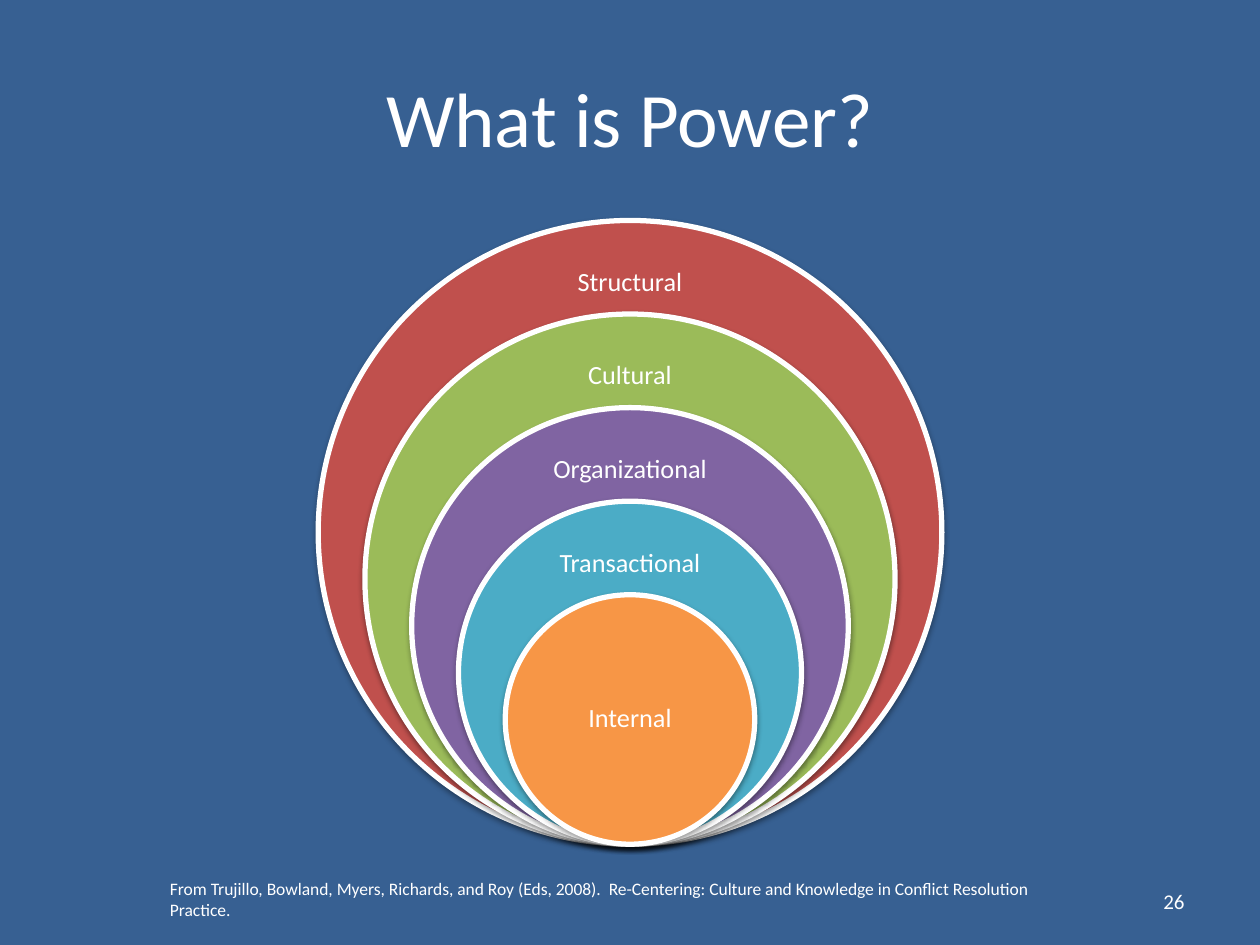
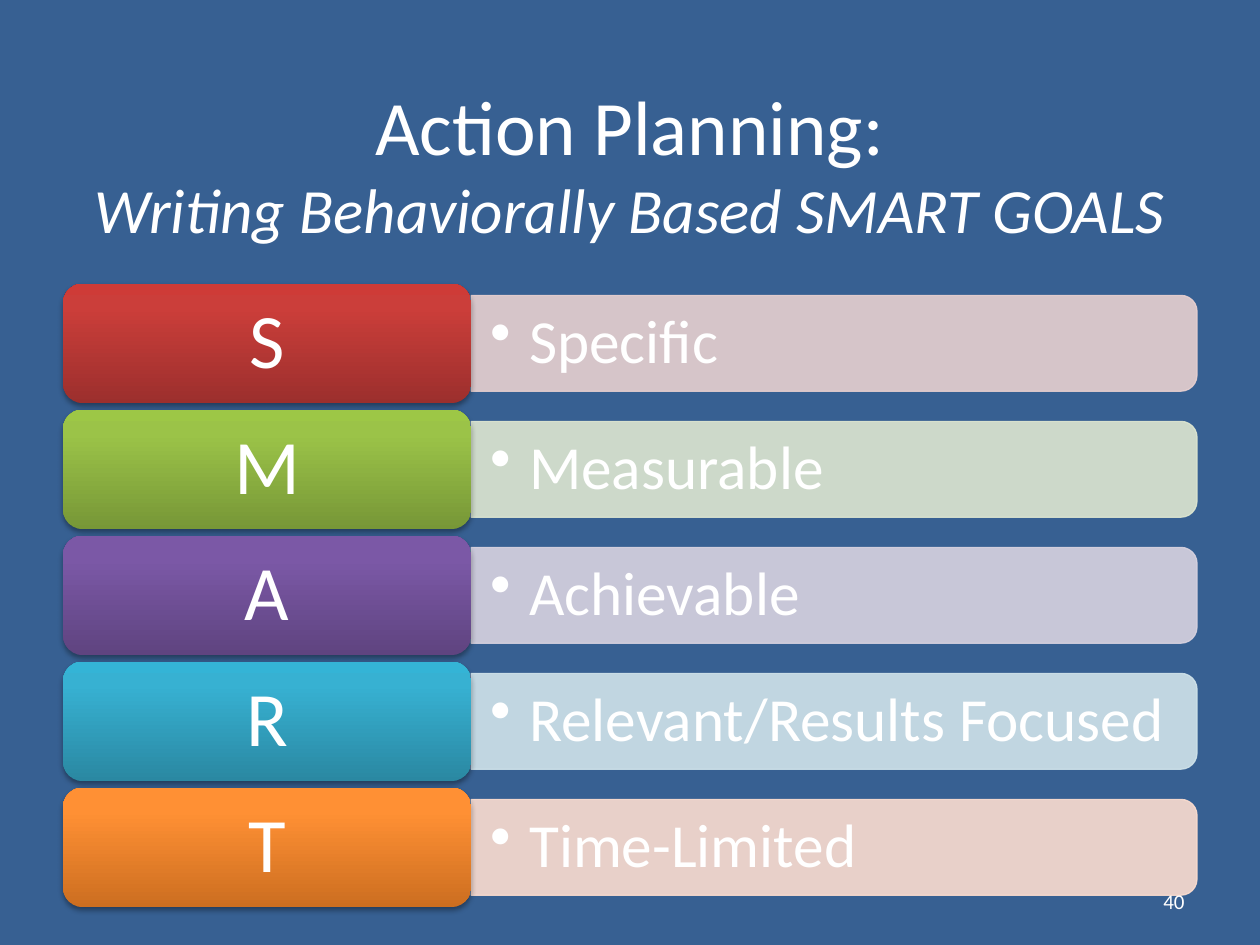
import pptx
import pptx.util
import pptx.dml.color
import pptx.enum.shapes
import pptx.enum.text
import pptx.oxml
import pptx.oxml.ns
from lxml import etree

Inches, Pt = pptx.util.Inches, pptx.util.Pt
SHAPE = pptx.enum.shapes.MSO_SHAPE
ALIGN = pptx.enum.text.PP_ALIGN
ANCHOR = pptx.enum.text.MSO_ANCHOR
qn = pptx.oxml.ns.qn

# Shared style
FONT, BACK, WHITE = "Calibri", "376092", "FFFFFF"

# Slide 1: rings from the outside in, with label width
POWER = "What is Power?"
RINGS = [
    ("Structural", "C0504D", 1.86),
    ("Cultural", "9BBB59", 1.81),
    ("Organizational", "8064A2", 1.79),
    ("Transactional", "4BACC6", 1.47),
    ("Internal", "F79646", 1.4),
]
SOURCE = ("From Trujillo, Bowland, Myers, Richards, and Roy (Eds, 2008).  "
          "Re-Centering: Culture and Knowledge in Conflict Resolution Practice.")

# Slide 2: goal, bar colour, tile gradient from bottom to top
PLAN = "Action Planning:"
SUB = "Writing Behaviorally Based SMART GOALS"
GOALS = [
    ("S", "Specific", "E8D0D0", ("9C2F2D", "CB3E3A", "CE3B37")),
    ("M", "Measurable", "DEE7D1", ("779737", "9BC348", "9DC746")),
    ("A", "Achievable", "D8D3E0", ("5F4480", "7B58A6", "7C57A8")),
    ("R", "Relevant/Results Focused", "D0E3EA", ("2A88A2", "37B1D2", "34B4D6")),
    ("T", "Time-Limited", "FCDDCF", ("CC6E20", "FF9034", "FF9136")),
]
STOPS = (0, 80, 100)


def color(code):
    return pptx.dml.color.RGBColor.from_string(code)


def add(parent, tag, **attrs):
    node = etree.SubElement(parent, qn(tag))
    for key, val in attrs.items():
        node.set(key, str(val))
    return node


def text(slide, box, words, size=15, align=ALIGN.CENTER, anchor=ANCHOR.MIDDLE,
         pad=(0.1, 0.05), space=None, bullet=False, sub=None):
    frame = slide.shapes.add_textbox(*map(Inches, box)).text_frame
    frame.word_wrap = True
    frame.vertical_anchor = anchor
    frame.margin_left = frame.margin_right = Inches(pad[0])
    frame.margin_top = frame.margin_bottom = Inches(pad[1])
    para = frame.paragraphs[0]
    para.alignment = align
    if space:
        para.line_spacing = space
    if bullet:
        props = para._p.get_or_add_pPr()
        props.set("marL", str(Inches(0.31)))
        props.set("indent", str(Inches(-0.31)))
        add(props, "a:buChar", char="•")
    for part, points, slant in [(words, size, False), (sub, 36, True)]:
        if part is None:
            continue
        if slant:
            para.add_line_break()
        run = para.add_run()
        run.text = part
        run.font.name, run.font.size = FONT, Pt(points)
        run.font.italic = slant
        run.font.color.rgb = color(WHITE)


def shape(slide, kind, box, fill=None, line=None, width=0.75):
    item = slide.shapes.add_shape(kind, *map(Inches, box))
    item.shadow.inherit = False
    if fill:
        item.fill.solid()
        item.fill.fore_color.rgb = color(fill)
    if line:
        item.line.color.rgb = color(line)
        item.line.width = Pt(width)
    else:
        item.line.fill.background()
    return item


def shade(item, alpha, dist):
    """Drop a soft shadow straight down."""
    effects = item._element.spPr.find(qn("a:effectLst"))
    drop = add(effects, "a:outerShdw", blurRad=Pt(3.1), dist=Pt(dist),
               dir=90 * 60000, rotWithShape=0)
    black = add(drop, "a:srgbClr", val="000000")
    add(black, "a:alpha", val=alpha * 1000)


def blend(item, codes):
    """Fill with a gradient that rises from the bottom."""
    item.fill.gradient()
    item.fill.gradient_angle = 90
    stops = next(item._element.spPr.iter(qn("a:gsLst")))
    for old in list(stops):
        stops.remove(old)
    for pos, code in zip(STOPS, codes):
        add(add(stops, "a:gs", pos=pos * 1000), "a:srgbClr", val=code)


def fade(item, alpha):
    for node in item._element.spPr.iter(qn("a:srgbClr")):
        add(node, "a:alpha", val=alpha * 1000)


def page(deck, number):
    slide = deck.slides.add_slide(deck.slide_layouts[6])
    slide.background.fill.solid()
    slide.background.fill.fore_color.rgb = color(BACK)
    return slide


def footer(slide, number):
    text(slide, (7.17, 6.95, 2.33, 0.4), number, size=12, align=ALIGN.RIGHT)


def power(deck):
    slide = page(deck, "26")
    text(slide, (0.5, 0.3, 9, 1.25), POWER, size=44)
    # Rings share a centre line and a bottom
    mid, base, full = 5, 6.7, 4.95
    step = full * 0.15
    for i, (name, fill, wide) in enumerate(RINGS):
        size = full - i * step
        top = base - size
        ring = shape(slide, SHAPE.OVAL, (mid - size / 2, top, size, size),
                     fill=fill, line=WHITE, width=3)
        shade(ring, 38, 1.6)
        last = i == len(RINGS) - 1
        drop, high = (size / 4, size / 2) if last else (0.25, 0.49)
        text(slide, (mid - wide / 2, top + drop, wide, high), name,
             pad=(0.12, 0.12), space=0.9)
    footer(slide, "26")
    text(slide, (1.25, 6.92, 7.08, 0.44), SOURCE, size=10,
         align=ALIGN.LEFT, anchor=ANCHOR.TOP)


def plan(deck):
    slide = page(deck, "40")
    text(slide, (0.5, 0.5, 9, 1.58), PLAN, size=44, sub=SUB)
    left, wide, high = 0.5, 3.24, 0.95
    long, thick = 5.76, 0.76
    start = left + wide
    for i, (letter, goal, tint, codes) in enumerate(GOALS):
        top = 2.25 + i
        mid = top + high / 2
        # Bar, turned so its round corners face right
        bar = shape(slide, SHAPE.ROUND_2_SAME_RECTANGLE,
                    (start + (long - thick) / 2, mid - long / 2, thick, long),
                    fill=tint, line=tint)
        bar.rotation = 90
        fade(bar, 90)
        text(slide, (start, mid - 0.345, 5.72, 0.69), goal, size=35,
             align=ALIGN.LEFT, pad=(0.15, 0.07), space=0.9, bullet=True)
        # Letter tile
        tile = shape(slide, SHAPE.ROUNDED_RECTANGLE, (left, top, wide, high))
        blend(tile, codes)
        shade(tile, 35, 1.8)
        text(slide, (left + 0.05, top + 0.05, wide - 0.1, high - 0.1), letter,
             size=44, pad=(0.18, 0.09), space=0.9)
    footer(slide, "40")


def main():
    deck = pptx.Presentation()
    deck.slide_width, deck.slide_height = Inches(10), Inches(7.5)
    power(deck)
    plan(deck)
    deck.save("out.pptx")


if __name__ == "__main__":
    main()
